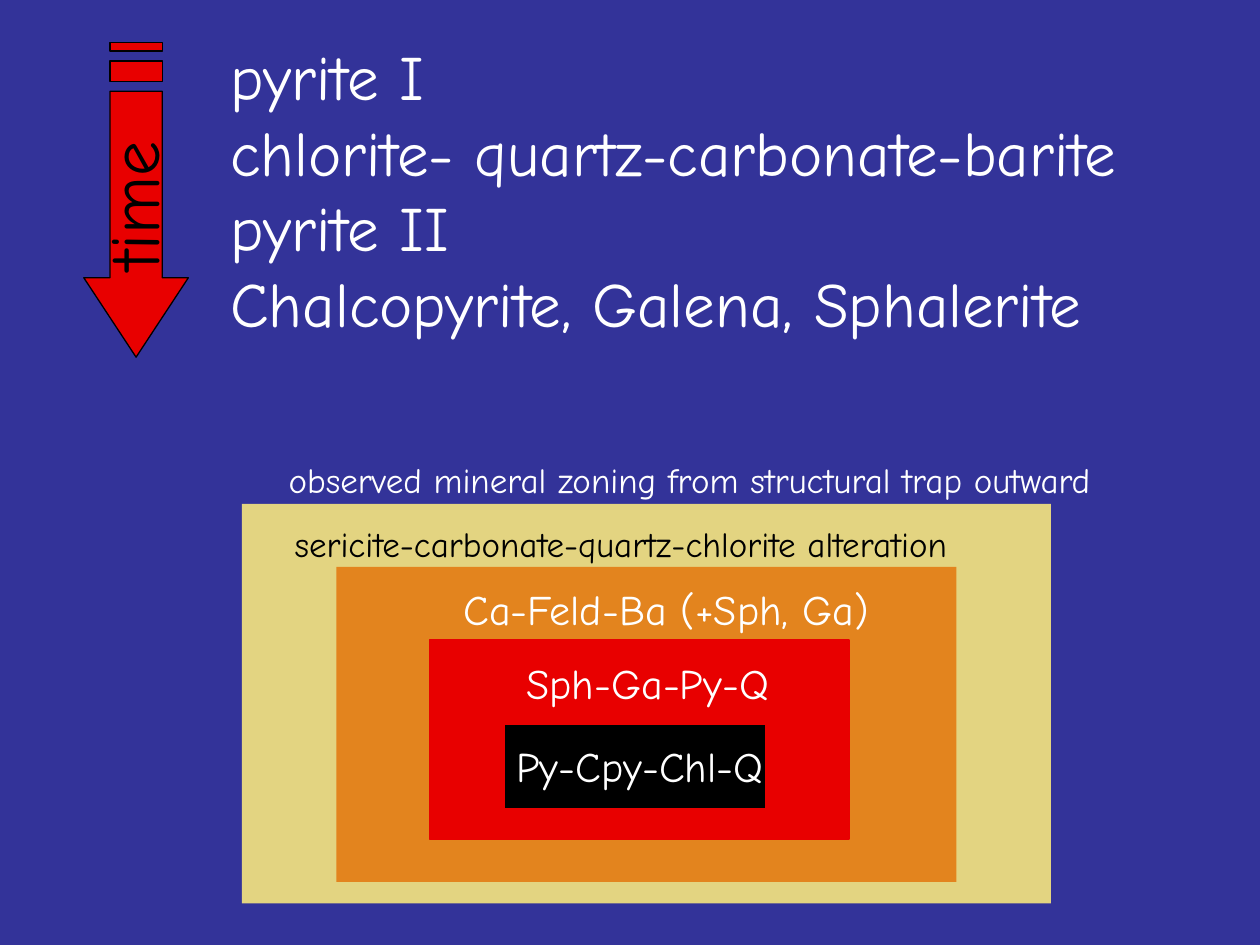
from dataclasses import dataclass

from pptx import Presentation
from pptx.dml.color import RGBColor
from pptx.enum.shapes import MSO_SHAPE
from pptx.enum.text import MSO_AUTO_SIZE, PP_ALIGN
from pptx.util import Inches, Pt

RECT = MSO_SHAPE.RECTANGLE
FIT = MSO_AUTO_SIZE.SHAPE_TO_FIT_TEXT
LEFT, CENTER = PP_ALIGN.LEFT, PP_ALIGN.CENTER


@dataclass(frozen=True)
class Theme:
    font: str = "Comic Neue"
    background: str = "333399"
    white: str = "FFFFFF"
    black: str = "000000"
    red: str = "E80000"
    orange: str = "E3841E"
    sand: str = "E3D481"
    time: int = 40
    sequence: int = 36
    zone: int = 24
    note: int = 20
    line: float = 0.75


@dataclass(frozen=True)
class Zone:
    box: tuple[float, float, float, float]
    fill: str
    outline: str | None = None


@dataclass(frozen=True)
class Label:
    box: tuple[float, float, float, float]
    lines: tuple[str, ...]
    size: int
    color: str
    align: PP_ALIGN = LEFT
    wrap: bool = False
    rotation: int = 0


T = Theme()

SEQUENCE = Label(
    (1.73, 0.25, 7.83, 2.52),
    ("pyrite I", "chlorite- quartz-carbonate-barite", "pyrite II",
     "Chalcopyrite, Galena, Sphalerite"),
    T.sequence, T.white)
TIME = Label((0.39, 1.2, 1.32, 0.77), ("time",), T.time, T.black, rotation=270)
CAPTION = Label(
    (1.46, 3.59, 8.03, 0.44),
    ("observed mineral zoning from structural trap outward",),
    T.note, T.white, CENTER, wrap=True)

# Zones from the outside in, labels from the inside out
ZONES = (
    Zone((1.92, 4, 6.42, 3.17), T.sand),
    Zone((2.67, 4.5, 4.92, 2.5), T.orange),
    Zone((3.41, 5.08, 3.33, 1.58), T.red, T.red),
    Zone((4, 5.75, 2.08, 0.67), T.black, T.red),
)
ZONE_LABELS = (
    Label((4, 5.83, 2.33, 0.51), ("Py-Cpy-Chl-Q",), T.zone, T.white),
    Label((4.08, 5.17, 2.26, 0.51), ("Sph-Ga-Py-Q",), T.zone, T.white),
    Label((3.58, 4.58, 3.58, 0.51), ("Ca-Feld-Ba (+Sph, Ga)",), T.zone, T.white),
    Label((2.24, 4.1, 5.83, 0.44),
          ("sericite-carbonate-quartz-chlorite alteration",), T.note, T.black),
)


def rgb(value: str) -> RGBColor:
    return RGBColor.from_string(value)


def paint(sp, fill: str, outline: str | None) -> None:
    sp.shadow.inherit = False
    sp.fill.solid()
    sp.fill.fore_color.rgb = rgb(fill)
    if outline is None:
        sp.line.fill.background()
    else:
        sp.line.color.rgb = rgb(outline)
        sp.line.width = Pt(T.line)


def add_zone(shapes, zone: Zone) -> None:
    sp = shapes.add_shape(RECT, *map(Inches, zone.box))
    paint(sp, zone.fill, zone.outline)


def add_label(shapes, label: Label) -> None:
    sp = shapes.add_textbox(*map(Inches, label.box))
    sp.rotation = label.rotation
    tf = sp.text_frame
    tf.word_wrap = label.wrap
    tf.auto_size = FIT
    style = {"name": T.font, "size": Pt(label.size)}
    for i, line in enumerate(label.lines):
        p = tf.paragraphs[0] if i == 0 else tf.add_paragraph()
        p.alignment = label.align
        r = p.add_run()
        r.text = line
        for name, value in style.items():
            setattr(r.font, name, value)
        r.font.color.rgb = rgb(label.color)


def add_time_arrow(shapes) -> None:
    """Draw a striped arrow pointing right, then turn it downward."""
    left, top, length, height = -0.17, 1.17, 2.5, 0.83
    upper, lower = height / 4, height * 3 / 4
    neck = 1.87
    head = [(0.39, upper), (neck, upper), (neck, 0), (length, height / 2),
            (neck, height), (neck, lower), (0.39, lower)]
    stripes = [[(a, upper), (b, upper), (b, lower), (a, lower)]
               for a, b in ((0.15, 0.31), (0, 0.07))]
    contours = [[(Inches(left + x), Inches(top + y)) for x, y in outline]
                for outline in (head, *stripes)]
    builder = shapes.build_freeform(*contours[0][0])
    for i, points in enumerate(contours):
        if i:
            builder.move_to(*points[0])
        builder.add_line_segments(points[1:], close=True)
    sp = builder.convert_to_shape()
    sp.rotation = 90
    paint(sp, T.red, T.black)


def main() -> None:
    prs = Presentation()
    prs.slide_width, prs.slide_height = Inches(10), Inches(7.5)
    s = prs.slides.add_slide(prs.slide_layouts[6])
    s.background.fill.solid()
    s.background.fill.fore_color.rgb = rgb(T.background)

    # Mineral sequence through time
    add_label(s.shapes, SEQUENCE)
    add_time_arrow(s.shapes)
    add_label(s.shapes, TIME)

    # Nested alteration zones
    group = s.shapes.add_group_shape()
    for zone in ZONES:
        add_zone(group.shapes, zone)
    for label in ZONE_LABELS:
        add_label(group.shapes, label)
    add_label(s.shapes, CAPTION)

    prs.save("out.pptx")


if __name__ == "__main__":
    main()
